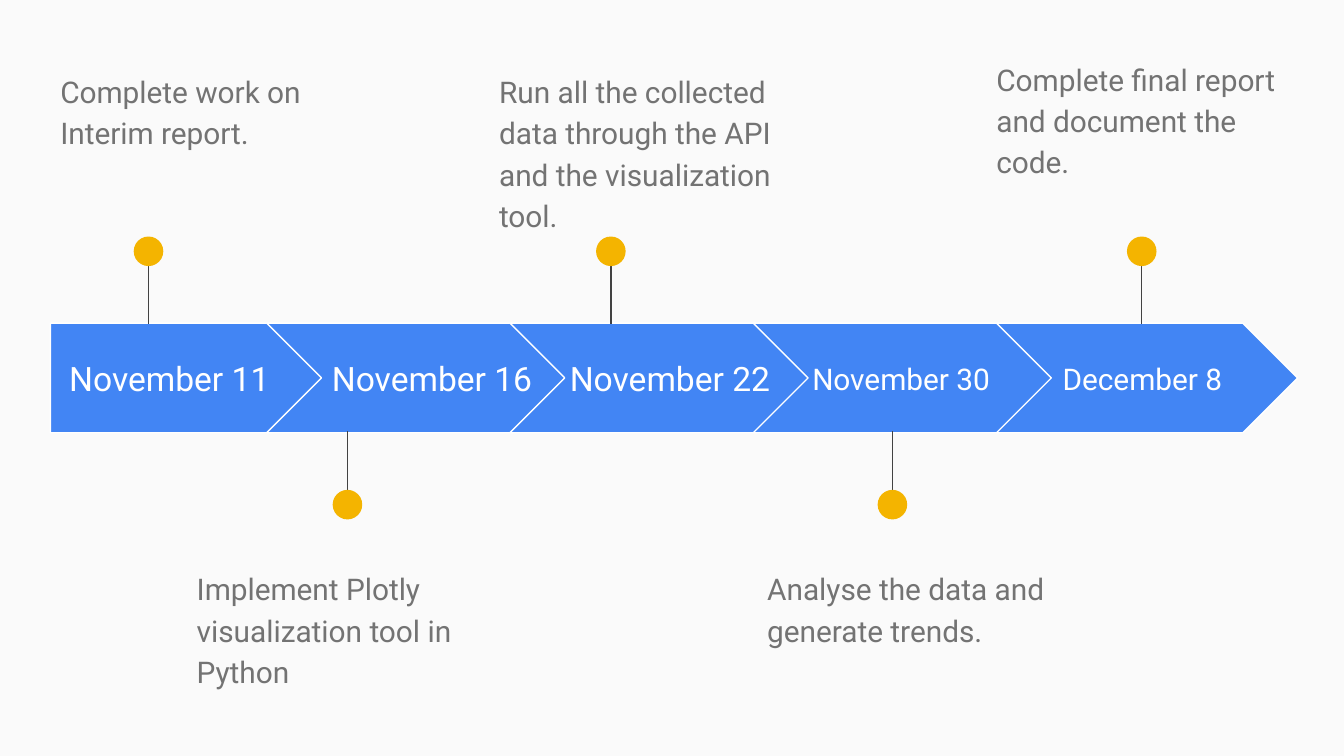
import collections
import pptx
import pptx.dml.color
import pptx.enum.shapes
import pptx.enum.text
import pptx.oxml
import pptx.util

PX = 4572
SHAPE = pptx.enum.shapes.MSO_SHAPE
ALIGN = pptx.enum.text.PP_ALIGN
ANCHOR = pptx.enum.text.MSO_ANCHOR

Theme = collections.namedtuple(
    "Theme", "font background band edge pin stem note date line_width note_size")
THEME = Theme("Roboto", "FAFAFA", "4285F4", "FFFFFF", "F4B400", "424242",
              "737373", "FFFFFF", 0.75, 16)

Box = collections.namedtuple("Box", "x y w h")
Milestone = collections.namedtuple(
    "Milestone", "date date_size date_x date_w pin_x note note_x note_y")

BAND = Box(75, 481, 1856, 163)
FIRST_WIDTH, CHEVRON_WIDTH, STEP = 410, 448, 362
PIN_SIZE = 44

MILESTONES = [
    Milestone("November 11", 18, 0, 354, 146,
              "Complete work on Interim report.", -5, -399),
    Milestone("November 16", 18, 391, 354, 442,
              "Implement Plotly visualization tool in Python", 198, 341),
    Milestone("November 22", 18, 749, 346, 834,
              "Run all the collected data through the API and the visualization tool.",
              648, -399),
    Milestone("November 30", 16, 1109, 314, 1253,
              "Analyse the data and generate trends.", 1047, 341),
    Milestone("December 8", 16, 1481, 288, 1624,
              "Complete final report and document the code.", 1388, -417),
]


def rgb(value):
    return pptx.dml.color.RGBColor.from_string(value)


def emu(*lengths):
    return [pptx.util.Emu(length * PX) for length in lengths]


def set_attrs(target, values):
    for name, value in values.items():
        setattr(target, name, value)


def add_shape(s, kind, box, fill, edge=None):
    sp = s.shapes.add_shape(kind, *emu(*box))
    sp.shadow.inherit = False
    sp.fill.solid()
    sp.fill.fore_color.rgb = rgb(fill)
    if edge:
        sp.line.color.rgb = rgb(edge)
        sp.line.width = pptx.util.Pt(THEME.line_width)
    else:
        sp.line.fill.background()
    return sp


def add_text(s, box, text, size, color, anchor, paragraph_format):
    tf = s.shapes.add_textbox(*emu(*box)).text_frame
    frame_format = {"word_wrap": True, "vertical_anchor": anchor}
    for side in ("left", "top", "right", "bottom"):
        frame_format[f"margin_{side}"] = pptx.util.Emu(20 * PX)
    set_attrs(tf, frame_format)
    p = tf.paragraphs[0]
    set_attrs(p, paragraph_format)
    r = p.add_run()
    r.text = text
    set_attrs(r.font, {"name": THEME.font, "size": pptx.util.Pt(size)})
    r.font.color.rgb = rgb(color)


def add_arrow(s, band, index):
    if index == 0:
        kind, box = SHAPE.PENTAGON, Box(band.x, band.y, FIRST_WIDTH, band.h)
    else:
        right = band.x + band.w - (len(MILESTONES) - 1 - index) * STEP
        kind = SHAPE.CHEVRON
        box = Box(right - CHEVRON_WIDTH, band.y, CHEVRON_WIDTH, band.h)
    sp = add_shape(s, kind, box, THEME.band, THEME.edge)
    sp.adjustments[0] = 0.5


def add_date(s, band, m):
    add_text(s, Box(band.x + m.date_x, band.y + 31, m.date_w, 102),
             m.date, m.date_size, THEME.date, ANCHOR.MIDDLE,
             {"alignment": ALIGN.CENTER})


def add_pin(s, band, m):
    x = band.x + m.pin_x
    if m.note_y < 0:
        start, end, top = band.y - 121, band.y + 1, band.y - 129
    else:
        bottom = band.y + band.h
        start, end, top = bottom + 120, bottom - 2, bottom + 85
    cn = s.shapes.add_connector(
        pptx.enum.shapes.MSO_CONNECTOR.STRAIGHT, *emu(x, start, x, end))
    cn.line.color.rgb = rgb(THEME.stem)
    cn.line.width = pptx.util.Pt(THEME.line_width)
    effects = pptx.oxml.parse_xml(
        '<a:effectLst xmlns:a="http://schemas.openxmlformats.org/drawingml/2006/main"/>')
    cn._element.spPr.append(effects)
    add_shape(s, SHAPE.OVAL, Box(x - PIN_SIZE // 2, top, PIN_SIZE, PIN_SIZE), THEME.pin)


def add_note(s, band, m):
    add_text(s, Box(band.x + m.note_x, band.y + m.note_y, 490, 198),
             m.note, THEME.note_size, THEME.note, ANCHOR.TOP,
             {"alignment": ALIGN.LEFT, "line_spacing": 1.15,
              "space_after": pptx.util.Pt(16)})


def add_timeline(s, band):
    for index, m in enumerate(MILESTONES):
        add_arrow(s, band, index)
        add_date(s, band, m)
        add_pin(s, band, m)
        add_note(s, band, m)


def main():
    prs = pptx.Presentation()
    prs.slide_width, prs.slide_height = emu(2000, 1125)
    s = prs.slides.add_slide(prs.slide_layouts[6])
    s.background.fill.solid()
    s.background.fill.fore_color.rgb = rgb(THEME.background)
    add_timeline(s, BAND)
    prs.save("out.pptx")


if __name__ == "__main__":
    main()
